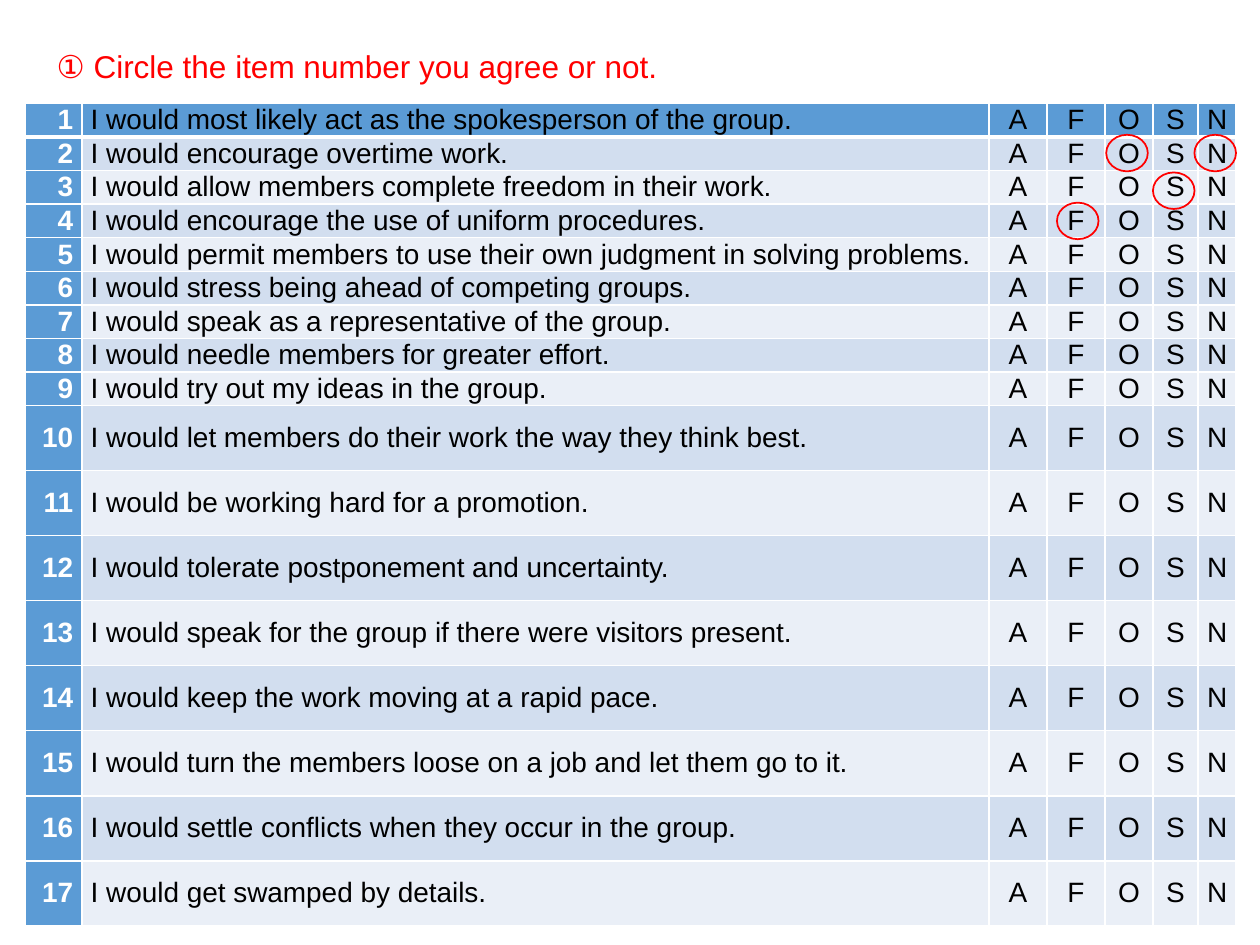
from itertools import accumulate

from lxml import etree
from pptx import Presentation
from pptx import util as u
from pptx.dml.color import RGBColor
from pptx.enum import shapes, text
from pptx.oxml.ns import qn

STATEMENTS = [
    "I would most likely act as the spokesperson of the group.",
    "I would encourage overtime work.",
    "I would allow members complete freedom in their work.",
    "I would encourage the use of uniform procedures.",
    "I would permit members to use their own judgment in solving problems.",
    "I would stress being ahead of competing groups.",
    "I would speak as a representative of the group.",
    "I would needle members for greater effort.",
    "I would try out my ideas in the group.",
    "I would let members do their work the way they think best.",
    "I would be working hard for a promotion.",
    "I would tolerate postponement and uncertainty.",
    "I would speak for the group if there were visitors present.",
    "I would keep the work moving at a rapid pace.",
    "I would turn the members loose on a job and let them go to it.",
    "I would settle conflicts when they occur in the group.",
    "I would get swamped by details.",
]
ANSWERS = "AFOSN"
CIRCLED = [("N", 2, 0.45, 0.48), ("S", 3, 0.46, 0.6),
           ("F", 4, 0.53, 0.5), ("O", 2, 0.46, 0.48)]

LEFT, TOP = 0.2, 0.82
WIDTHS = [0.45, 7.2, 0.46, 0.46, 0.38, 0.36, 0.3]
HEIGHTS = [2.4 / 9] * 9 + [4.13 / 8] * 8
COLUMN_EDGES = list(accumulate(WIDTHS, initial=LEFT))
ROW_EDGES = list(accumulate(HEIGHTS, initial=TOP))


def colour(value):
    return RGBColor.from_string(value)


def assign(target, values):
    for name, value in values.items():
        setattr(target, name, value)


class Questionnaire:
    font = "Arial"
    red, white, black = "FF0000", "FFFFFF", "000000"
    accent, bands = "5B9BD5", ("EAEFF7", "D2DEEF")
    cell_format = {"margin_left": u.Inches(0.07), "margin_right": u.Inches(0.07),
                   "margin_top": 0, "margin_bottom": 0,
                   "vertical_anchor": text.MSO_ANCHOR.MIDDLE}

    def __init__(self, deck):
        self.slide = deck.slides.add_slide(deck.slide_layouts[5])

    def wording(self, frame, words, size, ink, align, bold=False):
        paragraph = frame.paragraphs[0]
        paragraph.alignment = align
        run = paragraph.add_run()
        run.text = words
        assign(run.font, {"name": self.font, "size": u.Pt(size), "bold": bold})
        run.font.color.rgb = colour(ink)

    def instruction(self, words, left, top, width, height):
        heading = self.slide.shapes.title
        assign(heading, {"left": u.Inches(left), "top": u.Inches(top),
                         "width": u.Inches(width), "height": u.Inches(height)})
        assign(heading.text_frame, {"word_wrap": True,
                                    "auto_size": text.MSO_AUTO_SIZE.NONE,
                                    "vertical_anchor": text.MSO_ANCHOR.TOP})
        self.wording(heading.text_frame, words, 18, self.red, text.PP_ALIGN.LEFT)

    def borders(self, cell, row):
        properties = cell._tc.get_or_add_tcPr()
        points = {"L": 1, "R": 1, "T": 3 if row == 1 else 1, "B": 3 if row == 0 else 1}
        for side, width in points.items():
            edge = etree.SubElement(properties, qn(f"a:ln{side}"), w=str(u.Pt(width)))
            fill = etree.SubElement(edge, qn("a:solidFill"))
            etree.SubElement(fill, qn("a:srgbClr"), val=self.white)

    def items(self, statements):
        frame = self.slide.shapes.add_table(
            len(HEIGHTS), len(WIDTHS), u.Inches(LEFT), u.Inches(TOP),
            u.Inches(sum(WIDTHS)), u.Inches(sum(HEIGHTS)))
        grid = frame.table
        assign(grid, {"first_row": False, "horz_banding": False})
        for column, width in zip(grid.columns, WIDTHS):
            column.width = u.Inches(width)
        for index, statement in enumerate(statements):
            grid.rows[index].height = u.Inches(HEIGHTS[index])
            for position, words in enumerate([str(index + 1), statement, *ANSWERS]):
                self.item_cell(grid.cell(index, position), index, position, words)

    def item_cell(self, cell, row, column, words):
        number = column == 0
        align = {0: text.PP_ALIGN.RIGHT, 1: text.PP_ALIGN.LEFT}.get(
            column, text.PP_ALIGN.CENTER)
        assign(cell, self.cell_format)
        self.borders(cell, row)
        cell.fill.solid()
        cell.fill.fore_color.rgb = colour(
            self.accent if number or row == 0 else self.bands[(row + 1) % 2 - 1])
        self.wording(cell.text_frame, words, 16,
                     self.white if number else self.black, align, number)

    def circle(self, answer, item, across, down, width=0.33, height=0.29):
        column, row = 2 + ANSWERS.index(answer), item - 1
        x = COLUMN_EDGES[column] + across * WIDTHS[column] - width / 2
        y = ROW_EDGES[row] + down * HEIGHTS[row] - height / 2
        ring = self.slide.shapes.add_shape(
            shapes.MSO_SHAPE.OVAL, *map(u.Inches, (x, y, width, height)))
        ring.shadow.inherit = False
        ring.fill.background()
        ring.line.color.rgb = colour(self.red)
        ring.line.width = u.Pt(1)


def main():
    deck = Presentation()
    assign(deck, {"slide_width": u.Inches(10), "slide_height": u.Inches(7.5)})
    page = Questionnaire(deck)
    page.instruction("① Circle the item number you agree or not.", 0.35, 0.32, 8.03, 0.4)
    page.items(STATEMENTS)
    for mark in CIRCLED:
        page.circle(*mark)
    deck.save("out.pptx")


if __name__ == "__main__":
    main()
